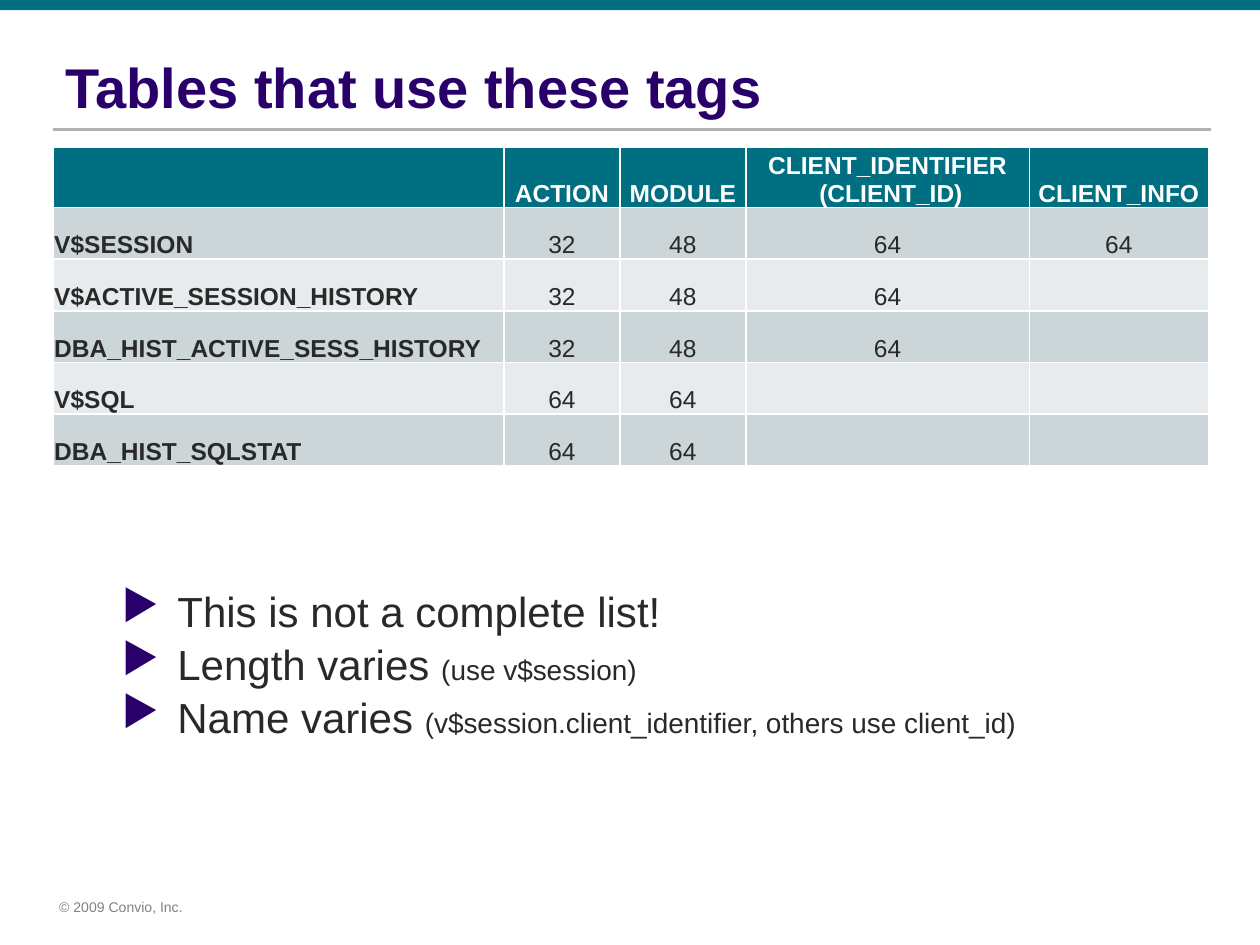
from lxml import etree
from pptx import Presentation
from pptx.dml.color import RGBColor
from pptx.enum.shapes import MSO_CONNECTOR, MSO_SHAPE
from pptx.enum.text import MSO_ANCHOR, PP_ALIGN
from pptx.oxml.ns import qn
from pptx.util import Inches, Pt

TEAL = RGBColor(0x00, 0x6F, 0x82)
PURPLE = RGBColor(0x29, 0x00, 0x6A)
INK = RGBColor(0x29, 0x29, 0x29)
WHITE = RGBColor(0xFF, 0xFF, 0xFF)
GRAY = RGBColor(0x80, 0x80, 0x80)
RULE_GRAY = RGBColor(0xB2, 0xB2, 0xB2)
BANDS = (RGBColor(0xCC, 0xD5, 0xD8), RGBColor(0xE7, 0xEB, 0xED))

COLUMN_WIDTHS = (3.58, 0.92, 1, 2.25, 1.42)
ROW_HEIGHT = 0.41
TABLE_ROWS = (
    ("", "ACTION", "MODULE", "CLIENT_IDENTIFIER\n (CLIENT_ID)", "CLIENT_INFO"),
    ("V$SESSION", "32", "48", "64", "64"),
    ("V$ACTIVE_SESSION_HISTORY", "32", "48", "64", ""),
    ("DBA_HIST_ACTIVE_SESS_HISTORY", "32", "48", "64", ""),
    ("V$SQL", "64", "64", "", ""),
    ("DBA_HIST_SQLSTAT", "64", "64", "", ""),
)
BULLETS = (
    (("This is not a complete list!", 24),),
    (("Length varies ", 24), ("(use v$session)", 16)),
    (("Name varies ", 24),
     ("(v$session.client_identifier, others use client_id)", 16)),
)


def add_run(paragraph, text, size, color, bold=False):
    """Append one formatted run to a paragraph."""
    run = paragraph.add_run()
    run.text = text
    run.font.name = "Arial"
    run.font.size = Pt(size)
    run.font.bold = bold
    run.font.color.rgb = color


def add_top_band(slide):
    """Draw the coloured band along the top edge."""
    band = slide.shapes.add_shape(
        MSO_SHAPE.RECTANGLE, 0, 0, Inches(10), Inches(0.08))
    band.shadow.inherit = False
    band.fill.solid()
    band.fill.fore_color.rgb = TEAL
    band.line.fill.background()


def add_title_rule(slide):
    """Draw the thin line under the title."""
    rule = slide.shapes.add_connector(
        MSO_CONNECTOR.STRAIGHT,
        Inches(0.42), Inches(1.03), Inches(9.61), Inches(1.03))
    rule.line.color.rgb = RULE_GRAY
    rule.line.width = Pt(1.5)
    etree.SubElement(rule._element.spPr, qn("a:effectLst"))


def add_title(slide, text):
    """Place and fill the title placeholder."""
    title = slide.shapes.title
    title.left, title.top = Inches(0.42), Inches(0.37)
    title.width, title.height = Inches(9.17), Inches(0.63)
    frame = title.text_frame
    frame.vertical_anchor = MSO_ANCHOR.BOTTOM
    paragraph = frame.paragraphs[0]
    paragraph.alignment = PP_ALIGN.LEFT
    add_run(paragraph, text, 32, PURPLE, bold=True)


def fill_cell(cell, text, row, column):
    """Fill and format one table cell according to its place."""
    is_header = row == 0
    cell.fill.solid()
    cell.fill.fore_color.rgb = TEAL if is_header else BANDS[(row - 1) % 2]
    if not text:
        return
    cell.vertical_anchor = MSO_ANCHOR.BOTTOM
    cell.margin_left = cell.margin_right = cell.margin_top = Inches(0.01)
    cell.margin_bottom = 0
    paragraph = cell.text_frame.paragraphs[0]
    paragraph.alignment = PP_ALIGN.CENTER if column else PP_ALIGN.LEFT
    for index, line in enumerate(text.split("\n")):
        if index:
            paragraph.add_line_break()
        add_run(paragraph, line, 14, WHITE if is_header else INK,
                bold=is_header or column == 0)


def add_tag_table(slide):
    """Add the table of tag lengths."""
    table = slide.shapes.add_table(
        len(TABLE_ROWS), len(COLUMN_WIDTHS), Inches(0.42), Inches(1.17),
        Inches(sum(COLUMN_WIDTHS)), Inches(ROW_HEIGHT * len(TABLE_ROWS))).table
    for column, width in zip(table.columns, COLUMN_WIDTHS):
        column.width = Inches(width)
    for row, texts in enumerate(TABLE_ROWS):
        table.rows[row].height = Inches(ROW_HEIGHT)
        for column, text in enumerate(texts):
            fill_cell(table.cell(row, column), text, row, column)


def set_bullet(paragraph):
    """Give a paragraph a purple triangle and a hanging indent."""
    properties = paragraph._p.get_or_add_pPr()
    properties.set("marL", str(Inches(1.06)))
    properties.set("indent", str(Inches(-0.44)))
    color = etree.SubElement(properties, qn("a:buClr"))
    etree.SubElement(color, qn("a:srgbClr"), val=str(PURPLE))
    etree.SubElement(properties, qn("a:buChar"), char="▶")


def add_bullets(slide):
    """Add the bulleted notes below the table."""
    frame = slide.shapes.add_textbox(
        Inches(0.25), Inches(4.58), Inches(9.33), Inches(2.25)).text_frame
    frame.word_wrap = True
    for index, runs in enumerate(BULLETS):
        paragraph = frame.add_paragraph() if index else frame.paragraphs[0]
        paragraph.level = 1
        set_bullet(paragraph)
        paragraph.line_spacing = 1.05
        for text, size in runs:
            add_run(paragraph, text, size, INK)


def add_copyright(slide):
    """Add the small copyright line at the bottom."""
    frame = slide.shapes.add_textbox(
        Inches(0.42), Inches(7.08), Inches(1.15), Inches(0.24)).text_frame
    frame.word_wrap = False
    frame.margin_left = Inches(0.05)
    add_run(frame.paragraphs[0], "© 2009 Convio, Inc.", 8, GRAY)


def main():
    """Build and save the slide."""
    presentation = Presentation()
    presentation.slide_width = Inches(10)
    presentation.slide_height = Inches(7.5)
    slide = presentation.slides.add_slide(presentation.slide_layouts[5])
    add_top_band(slide)
    add_copyright(slide)
    add_title_rule(slide)
    add_title(slide, "Tables that use these tags")
    add_tag_table(slide)
    add_bullets(slide)
    presentation.save("out.pptx")


if __name__ == "__main__":
    main()
